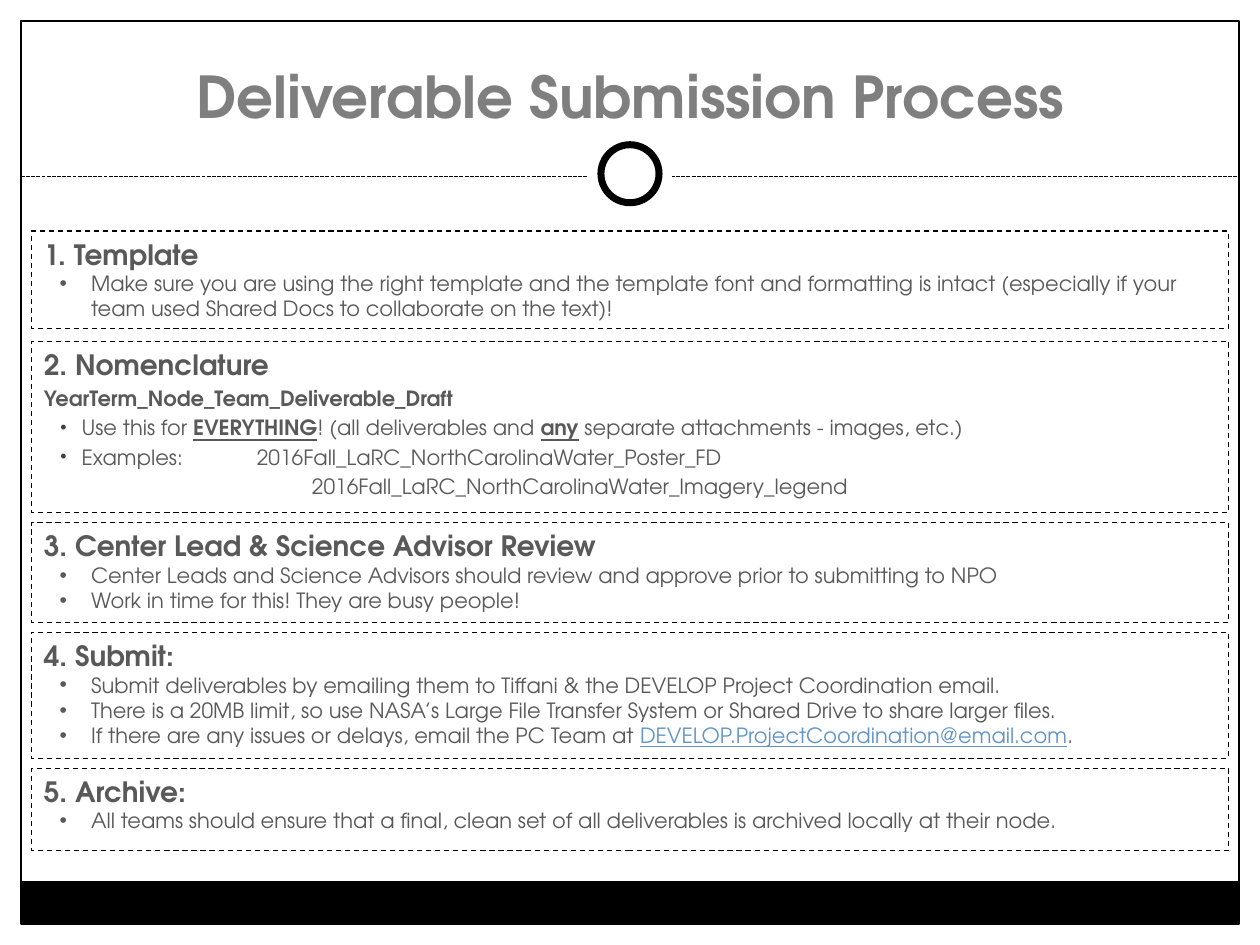
from lxml.etree import SubElement
from pptx import Presentation
from pptx.dml.color import RGBColor
from pptx.enum.dml import MSO_LINE_DASH_STYLE as Dash
from pptx.enum.shapes import MSO_CONNECTOR as Connector, MSO_SHAPE as Shape
from pptx.enum.text import MSO_ANCHOR as Anchor, MSO_AUTO_SIZE as AutoSize, PP_ALIGN as Align
from pptx.oxml.ns import qn
from pptx.util import Pt

FONT = "TeX Gyre Adventor"
BLACK, WHITE, GRAY, TEXT, LINK = "000000", "FFFFFF", "7F7F7F", "595959", "6194C8"
BULLET = "3F3F3F"


def color(hex_value):
    return RGBColor.from_string(hex_value)


class ProcessSlide:
    """Holds the slide and its style; one method for each kind of element."""

    def __init__(self, slide):
        self.slide = slide

    def style_font(self, font, size, bold, hex_value=TEXT):
        font.name, font.size, font.bold = FONT, Pt(size), bold
        font.color.rgb = color(hex_value)

    def title(self, text, left, top, width, height):
        title = self.slide.shapes.title
        title.left, title.top = Pt(left), Pt(top)
        title.width, title.height = Pt(width), Pt(height)
        frame = title.text_frame
        frame.text = text
        frame.word_wrap = True
        frame.auto_size = AutoSize.NONE
        frame.vertical_anchor = Anchor.BOTTOM
        paragraph = frame.paragraphs[0]
        paragraph.alignment = Align.CENTER
        self.style_font(paragraph.font, 33, True, GRAY)

    def shape(self, kind, left, top, width, height, fill=None, line=None, weight=0.75, dash=None):
        shape = self.slide.shapes.add_shape(kind, Pt(left), Pt(top), Pt(width), Pt(height))
        shape.shadow.inherit = False
        if fill:
            shape.fill.solid()
            shape.fill.fore_color.rgb = color(fill)
        else:
            shape.fill.background()
        if line:
            shape.line.color.rgb = color(line)
            shape.line.width = Pt(weight)
            shape.line.dash_style = dash
        else:
            shape.line.fill.background()
        return shape

    def rule(self, left, right, y):
        rule = self.slide.shapes.add_connector(Connector.STRAIGHT, Pt(left), Pt(y), Pt(right), Pt(y))
        rule.line.color.rgb = color(BLACK)
        rule.line.width = Pt(0.75)
        rule.line.dash_style = Dash.SQUARE_DOT
        SubElement(rule._element.spPr, qn("a:effectLst"))

    def step(self, top, height, heading, paragraphs):
        box = self.shape(Shape.RECTANGLE, 18, top, 684, height, line=BLACK, dash=Dash.DASH)
        frame = box.text_frame
        frame.word_wrap = True
        frame.vertical_anchor = Anchor.TOP
        first = frame.paragraphs[0]
        first.text = heading
        first.alignment = Align.LEFT
        self.style_font(first.font, 16, True)
        for options in paragraphs:
            self.paragraph(frame.add_paragraph(), **options)

    def paragraph(self, paragraph, runs, indent=27, hanging=18, before=0,
                  bold=False, bullet=True, bullet_color=None, tab=None):
        paragraph.alignment = Align.LEFT
        paragraph.space_before = Pt(before)
        properties = paragraph._p.get_or_add_pPr()
        properties.set("marL", str(Pt(indent)))
        properties.set("indent", str(-Pt(hanging)))
        if bullet_color:
            SubElement(SubElement(properties, qn("a:buClr")), qn("a:srgbClr"), val=bullet_color)
            SubElement(properties, qn("a:buSzPct"), val="85000")
        if bullet:
            SubElement(properties, qn("a:buFont"), typeface="Arial")
            SubElement(properties, qn("a:buChar"), char="•")
        if tab:
            tabs = SubElement(properties, qn("a:tabLst"))
            SubElement(tabs, qn("a:tab"), pos=str(Pt(tab)), algn="l")
        self.style_font(paragraph.font, 12, bold)
        for text, mark in runs:
            run = paragraph.add_run()
            run.text = text
            if mark:
                run.font.underline = True
            if mark == "strong":
                run.font.bold = True
            if mark == "link":
                run.font.color.rgb = color(LINK)


def point(*runs, **options):
    """Describe a paragraph; a run is plain text or a (text, mark) pair."""
    pairs = [(run, None) if isinstance(run, str) else run for run in runs]
    return dict(runs=pairs, **options)


def main():
    deck = Presentation()
    deck.slide_width, deck.slide_height = Pt(720), Pt(540)
    page = ProcessSlide(deck.slides.add_slide(deck.slide_layouts[5]))

    # Frame, footer band and header ornament
    page.title("Deliverable Submission Process", 24, 18, 672, 60)
    page.shape(Shape.RECTANGLE, 12, 503.5, 696, 24.5, fill=BLACK)
    page.shape(Shape.RECTANGLE, 12, 12, 696, 516, line=BLACK)
    page.rule(12, 708, 100.8)
    page.shape(Shape.OVAL, 336, 75.3, 48, 48, fill=WHITE)
    page.shape(Shape.OVAL, 343.4, 82.7, 33.2, 33.2, fill=WHITE, line=BLACK, weight=4)

    # Steps of the process
    spaced = dict(before=2.4)
    small_bullet = dict(spaced, indent=21.6, hanging=12.2, bullet_color=BULLET)
    steps = [
        (132, 55.8, "1. Template", [
            point("Make sure you are using the right template and the template font and formatting "
                  "is intact (especially if your team used Shared Docs to collaborate on the text)!"),
        ]),
        (195, 98, "2. Nomenclature", [
            point("YearTerm_Node_Team_Deliverable_Draft",
                  indent=0, hanging=0, bold=True, bullet=False, **spaced),
            point("Use this for ", ("EVERYTHING", "strong"), "! (all deliverables and ",
                  ("any", "strong"), " separate attachments - images, etc.)", **small_bullet),
            point("Examples:\t2016Fall_LaRC_NorthCarolinaWater_Poster_FD",
                  tab=121.7, **small_bullet),
            point("2016Fall_LaRC_NorthCarolinaWater_Imagery_legend",
                  indent=153.2, hanging=0, bullet=False, **spaced),
        ]),
        (298.6, 57, "3. Center Lead & Science Advisor Review", [
            point("Center Leads and Science Advisors should review and approve prior to "
                  "submitting to NPO"),
            point("Work in time for this! They are busy people!"),
        ]),
        (361.3, 72, "4. Submit:", [
            point("Submit deliverables by emailing them to Tiffani & the DEVELOP Project "
                  "Coordination email."),
            point("There is a 20MB limit, so use NASA’s Large File Transfer System or "
                  "Shared Drive to share larger files."),
            point("If there are any issues or delays, email the PC Team at ",
                  ("DEVELOP.ProjectCoordination@email.com", "link"), "."),
        ]),
        (439, 47, "5. Archive:", [
            point("All teams should ensure that a final, clean set of all deliverables is "
                  "archived locally at their node."),
        ]),
    ]
    for step in steps:
        page.step(*step)

    deck.save("out.pptx")


if __name__ == "__main__":
    main()
